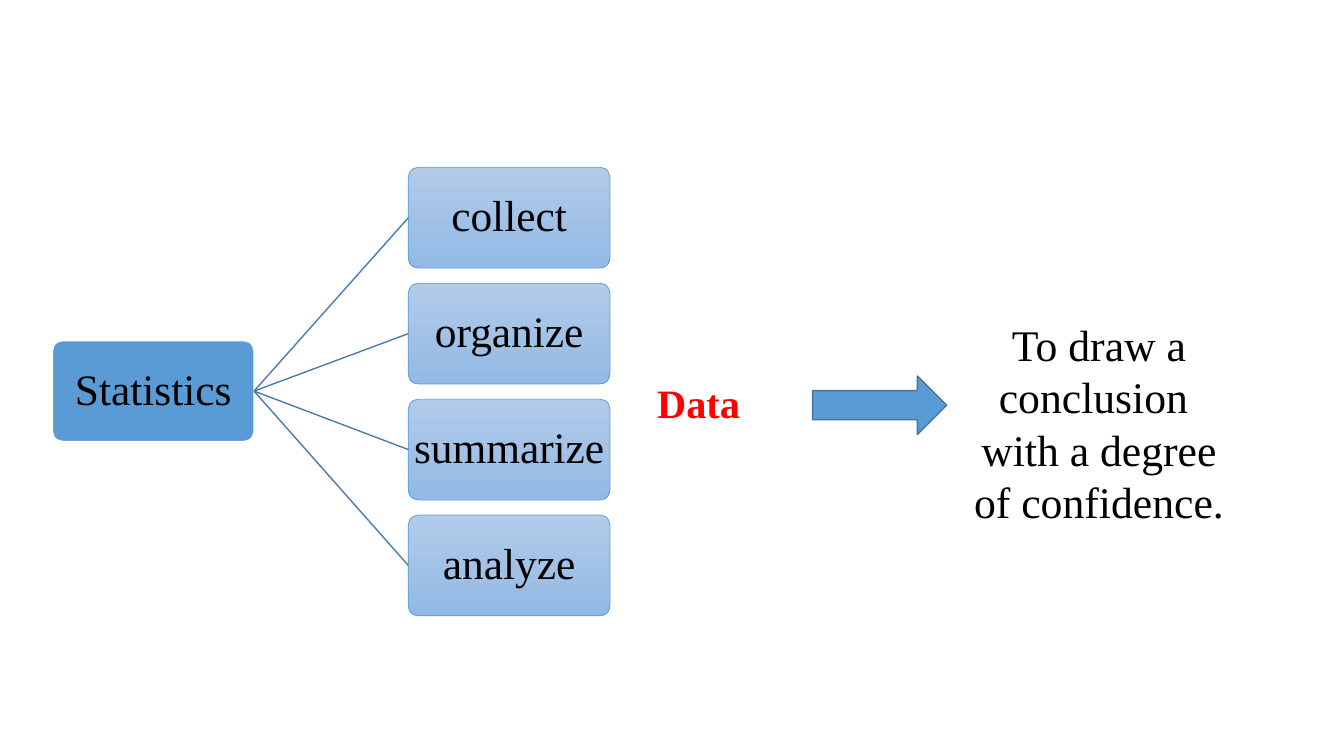
"""Build a slide showing how statistics turns data into a conclusion."""
import dataclasses

import pptx
import pptx.dml.color
import pptx.enum.shapes
import pptx.enum.text
import pptx.oxml
import pptx.oxml.ns
import pptx.util

Inches = pptx.util.Inches
Pt = pptx.util.Pt
Color = pptx.dml.color.RGBColor.from_string
Shape = pptx.enum.shapes.MSO_SHAPE
Align = pptx.enum.text.PP_ALIGN
Anchor = pptx.enum.text.MSO_ANCHOR


@dataclasses.dataclass(frozen=True)
class Theme:
    font: str = "Times New Roman"
    node_size: float = 31
    data_size: float = 28.8
    goal_size: float = 31.2
    text: str = "000000"
    accent: str = "FF0000"
    blue: str = "5B9BD5"
    white: str = "FFFFFF"
    link: str = "497CAB"
    arrow_line: str = "43739E"
    step_top: str = "B1CBE9"
    step_bottom: str = "93B9E4"


theme = Theme()


def add_text(box, lines, size, color, align, anchor, inset, spacing, bold=False):
    frame = box.text_frame
    frame.word_wrap = True
    frame.vertical_anchor = anchor
    frame.margin_left = frame.margin_right = Inches(inset)
    frame.margin_top = frame.margin_bottom = Inches(0.05)
    for index, line in enumerate(lines):
        para = frame.add_paragraph() if index else frame.paragraphs[0]
        para.alignment = align
        para.line_spacing = spacing
        span = para.add_run()
        span.text = line
        span.font.name = theme.font
        span.font.size = Pt(size)
        span.font.bold = bold
        span.font.color.rgb = Color(color)


def add_node(label, left, top, line_color, line_width):
    node = page.shapes.add_shape(
        Shape.ROUNDED_RECTANGLE, Inches(left), Inches(top), Inches(2), Inches(1))
    node.shadow.inherit = False
    node.adjustments[0] = 0.1
    node.fill.solid()
    node.fill.fore_color.rgb = Color(theme.blue)
    node.line.color.rgb = Color(line_color)
    node.line.width = Pt(line_width)
    add_text(node, [label], theme.node_size, theme.text,
             Align.CENTER, Anchor.MIDDLE, 0, 0.9)
    return node


deck = pptx.Presentation()
deck.slide_width = Inches(13.33)
deck.slide_height = Inches(7.5)
page = deck.slides.add_slide(deck.slide_layouts[6])

data_box = page.shapes.add_textbox(Inches(6.42), Inches(3.62), Inches(1.1), Inches(0.67))
add_text(data_box, ["Data"], theme.data_size, theme.accent,
         Align.LEFT, Anchor.BOTTOM, 0.1, 0.9, bold=True)

statistics = add_node("Statistics", 0.52, 3.38, theme.white, 1)
for row, label in enumerate(["collect", "organize", "summarize", "analyze"]):
    step = add_node(label, 4.05, 1.66 + 1.15 * row, theme.blue, 0.5)
    step.fill.gradient()
    step.fill.gradient_angle = 270
    for stop, color in zip(step.fill.gradient_stops, [theme.step_top, theme.step_bottom]):
        stop.color.rgb = Color(color)

    link = page.shapes.add_connector(pptx.enum.shapes.MSO_CONNECTOR.STRAIGHT, 0, 0, 0, 0)
    link.begin_connect(statistics, 3)
    link.end_connect(step, 1)
    link.line.color.rgb = Color(theme.link)
    link.line.width = Pt(1)
    properties = link.element.find(pptx.oxml.ns.qn("p:spPr"))
    properties.append(pptx.oxml.parse_xml(
        '<a:effectLst xmlns:a="http://schemas.openxmlformats.org/drawingml/2006/main"/>'))

arrow = page.shapes.add_shape(
    Shape.RIGHT_ARROW, Inches(8.06), Inches(3.73), Inches(1.33), Inches(0.58))
arrow.shadow.inherit = False
arrow.fill.solid()
arrow.fill.fore_color.rgb = Color(theme.blue)
arrow.line.color.rgb = Color(theme.arrow_line)
arrow.line.width = Pt(1)

goal_box = page.shapes.add_textbox(Inches(9.4), Inches(2.48), Inches(3), Inches(3.42))
add_text(goal_box, ["To draw a conclusion ", "with a degree of confidence."],
         theme.goal_size, theme.text, Align.CENTER, Anchor.MIDDLE, 0.15, 1.0)

deck.save("out.pptx")
